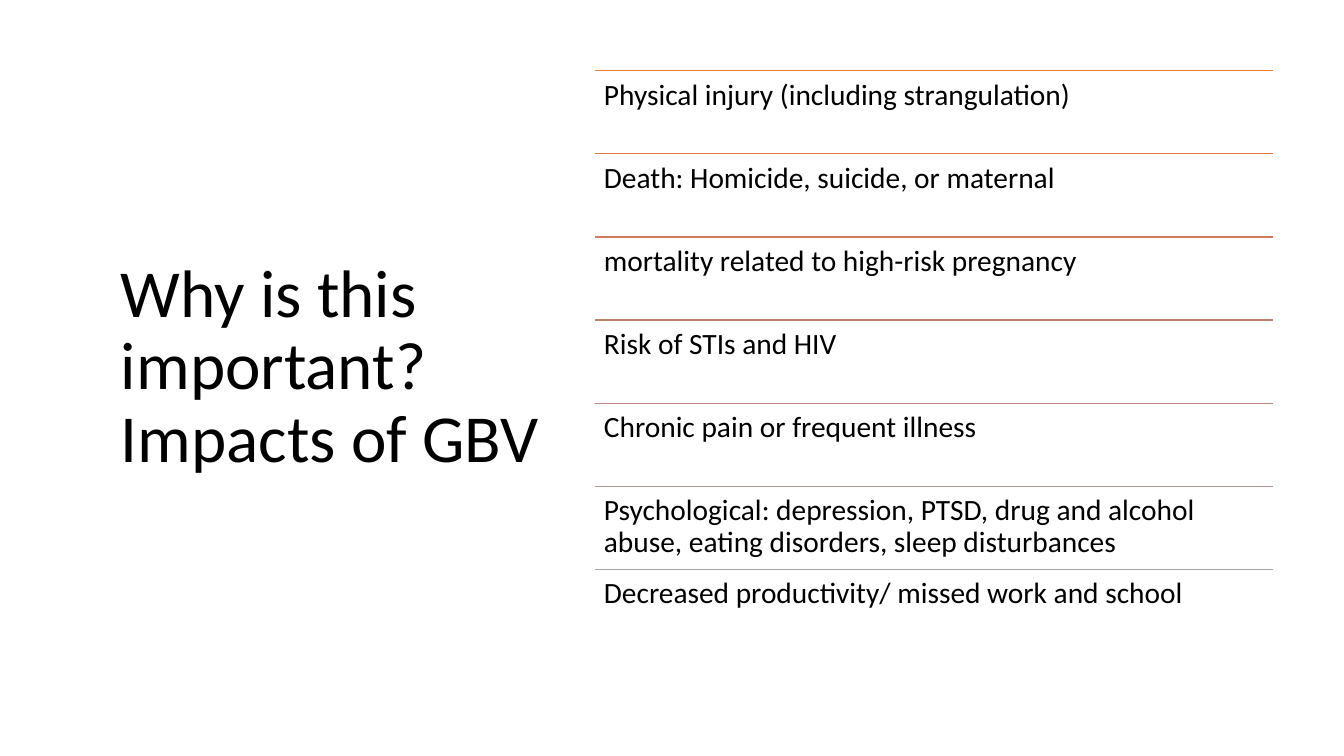
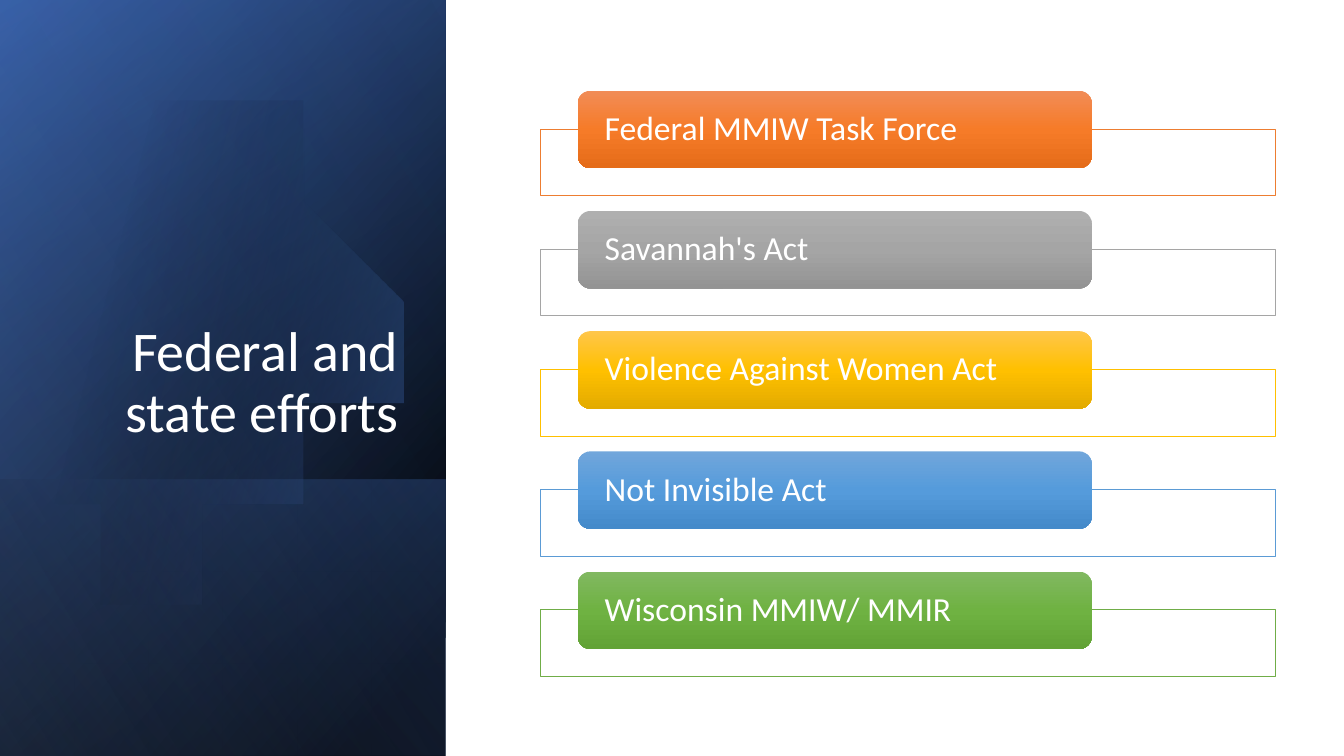
from dataclasses import dataclass
from typing import Optional

from lxml.etree import SubElement
from pptx import Presentation
from pptx.dml.color import RGBColor
from pptx.enum.shapes import MSO_CONNECTOR, MSO_SHAPE
from pptx.enum.text import MSO_ANCHOR, MSO_AUTO_SIZE, PP_ALIGN
from pptx.oxml.ns import qn
from pptx.util import Inches, Pt

FONT = "Calibri"
COLORS = {
    "black": "000000",
    "white": "FFFFFF",
    "blue": "4472C4",
    "deep_blue": "2F5597",
    "pale_blue": "8FAADC",
}
TITLE_ONLY_LAYOUT = 5


@dataclass(frozen=True)
class Box:
    left: float
    top: float
    width: float
    height: float

    def lengths(self) -> tuple:
        return tuple(Inches(v) for v in (self.left, self.top, self.width, self.height))


@dataclass(frozen=True)
class Stop:
    position: int
    color: str
    opacity: Optional[int] = None


@dataclass(frozen=True)
class Impact:
    text: str
    rule_color: str


@dataclass(frozen=True)
class Effort:
    text: str
    outline: str
    shades: tuple


@dataclass(frozen=True)
class Panel:
    box: Box
    stops: tuple
    angle: int


IMPACTS = (
    Impact("Physical injury (including strangulation)", "ED7D31"),
    Impact("Death: Homicide, suicide, or maternal", "DE7A47"),
    Impact("mortality related to high-risk pregnancy", "D17B5C"),
    Impact("Risk of STIs and HIV", "C48170"),
    Impact("Chronic pain or frequent illness", "B98A82"),
    Impact("Psychological: depression, PTSD, drug and alcohol abuse, "
           "eating disorders, sleep disturbances", "AE9694"),
    Impact("Decreased productivity/ missed work and school", "A5A5A5"),
)
EFFORTS = (
    Effort("Federal MMIW Task Force", "ED7D31", ("F18C57", "F67B28", "E56C19")),
    Effort("Savannah's Act", "A5A5A5", ("AFAFAF", "A5A5A5", "939393")),
    Effort("Violence Against Women Act", "FFC000", ("FFC64B", "FFC000", "E3AB00")),
    Effort("Not Invisible Act", "5B9BD5", ("71A6DB", "559BDB", "448ACA")),
    Effort("Wisconsin MMIW/ MMIR", "70AD47", ("81B861", "6FB242", "62A336")),
)

FULL_PANEL = Box(-1.54, 1.54, 7.5, 4.42)
LOWER_PANEL = Box(0.84, 3.92, 2.74, 4.42)
BACK_PANELS = (
    Panel(FULL_PANEL, (Stop(8, COLORS["black"]), Stop(100, COLORS["deep_blue"])), 50),
    Panel(FULL_PANEL, (Stop(0, COLORS["black"], 0), Stop(99, COLORS["blue"], 46)), 30),
    Panel(LOWER_PANEL, (Stop(2, COLORS["blue"], 29), Stop(100, COLORS["black"], 30)), 130),
)
FRONT_PANEL = Panel(
    FULL_PANEL, (Stop(0, COLORS["black"], 0), Stop(99, COLORS["pale_blue"], 11)), 120)

DISC_START = (1.49, 1.1)
DISC_RIGHT_CURVES = (
    ((2.46, 1.12), (3.35, 1.77), (3.63, 2.75)),
    ((3.98, 3.97), (3.28, 5.23), (2.07, 5.58)),
    ((1.31, 5.8), (0.53, 5.61), (-0.03, 5.14)),
)
DISC_LEFT_EDGE = ((-0.15, 5.03), (-0.15, 1.75), (0, 1.61))
DISC_TOP_CURVES = (
    ((0.23, 1.42), (0.5, 1.28), (0.8, 1.19)),
    ((1.03, 1.13), (1.26, 1.1), DISC_START),
)


def rgb(color: str) -> RGBColor:
    return RGBColor.from_string(color)


def write_text(shape, text: str, *, size: float, color: str,
               align=PP_ALIGN.LEFT, anchor=MSO_ANCHOR.TOP,
               margins: tuple = (0.1, 0.05)) -> None:
    frame = shape.text_frame
    frame.text = text
    frame.word_wrap = True
    frame.auto_size = MSO_AUTO_SIZE.NONE
    frame.vertical_anchor = anchor
    frame.margin_left = frame.margin_right = Inches(margins[0])
    frame.margin_top = frame.margin_bottom = Inches(margins[1])
    for paragraph in frame.paragraphs:
        paragraph.alignment = align
        paragraph.line_spacing = 0.9
        paragraph.space_before = Pt(0)
        for run in paragraph.runs:
            run.font.name = FONT
            run.font.size = Pt(size)
            run.font.color.rgb = rgb(color)


def place_title(slide, text: str, box: Box, *, size: float, color: str, align) -> None:
    title = slide.shapes.title
    title.left, title.top, title.width, title.height = box.lengths()
    write_text(title, text, size=size, color=color, align=align, anchor=MSO_ANCHOR.BOTTOM)
    slide.shapes.element.append(title.element)


def set_opacity(color_element, opacity: int) -> None:
    SubElement(color_element, qn("a:alpha")).set("val", str(opacity * 1000))


def fill_gradient(shape, stops: tuple, angle: float) -> None:
    shape.fill.gradient()
    shape.fill.gradient_angle = 360 - angle
    stop_list = next(shape.element.iter(qn("a:gsLst")))
    for old_stop in list(stop_list):
        stop_list.remove(old_stop)
    for stop in stops:
        stop_element = SubElement(stop_list, qn("a:gs"))
        stop_element.set("pos", str(stop.position * 1000))
        color_element = SubElement(stop_element, qn("a:srgbClr"))
        color_element.set("val", stop.color)
        if stop.opacity is not None:
            set_opacity(color_element, stop.opacity)


def add_plain_shape(slide, kind, box: Box):
    shape = slide.shapes.add_shape(kind, *box.lengths())
    shape.shadow.inherit = False
    shape.line.fill.background()
    return shape


def add_panel(slide, panel: Panel) -> None:
    shape = add_plain_shape(slide, MSO_SHAPE.RECTANGLE, panel.box)
    shape.rotation = 90
    next(shape.element.iter(qn("a:xfrm"))).set("flipH", "1")
    fill_gradient(shape, panel.stops, panel.angle)


def curve_points(start: tuple, curves: tuple, steps: int = 24) -> list:
    points = []
    for first, second, end in curves:
        for step in range(1, steps + 1):
            t = step / steps
            weights = ((1 - t) ** 3, 3 * t * (1 - t) ** 2, 3 * t ** 2 * (1 - t), t ** 3)
            corners = (start, first, second, end)
            points.append(tuple(
                sum(weight * corner[axis] for weight, corner in zip(weights, corners))
                for axis in (0, 1)))
        start = end
    return points


def add_disc(slide) -> None:
    points = (curve_points(DISC_START, DISC_RIGHT_CURVES) + list(DISC_LEFT_EDGE)
              + curve_points(DISC_LEFT_EDGE[-1], DISC_TOP_CURVES))
    builder = slide.shapes.build_freeform(*DISC_START, scale=Inches(1))
    builder.add_line_segments(points, close=True)
    disc = builder.convert_to_shape()
    disc.shadow.inherit = False
    disc.line.fill.background()
    fill_gradient(disc, (Stop(29, COLORS["black"], 0), Stop(100, COLORS["blue"], 43)), 14)


def add_rule(slide, left: float, top: float, width: float, color: str) -> None:
    rule = slide.shapes.add_connector(
        MSO_CONNECTOR.STRAIGHT, Inches(left), Inches(top), Inches(left + width), Inches(top))
    rule.line.color.rgb = rgb(color)
    rule.line.width = Pt(1)
    SubElement(rule.element.find(qn("p:spPr")), qn("a:effectLst"))


def add_impact(slide, impact: Impact, box: Box) -> None:
    add_rule(slide, box.left, box.top, box.width, impact.rule_color)
    text_box = slide.shapes.add_textbox(*box.lengths())
    write_text(text_box, impact.text, size=21, color=COLORS["black"], margins=(0.09, 0.09))


def add_effort(slide, effort: Effort, top: float) -> None:
    frame = add_plain_shape(slide, MSO_SHAPE.RECTANGLE, Box(5.36, top, 7.29, 0.66))
    frame.fill.solid()
    frame.fill.fore_color.rgb = rgb(COLORS["white"])
    set_opacity(next(frame.element.iter(qn("a:srgbClr"))), 90)
    frame.line.color.rgb = rgb(effort.outline)
    frame.line.width = Pt(0.5)

    bar = add_plain_shape(slide, MSO_SHAPE.ROUNDED_RECTANGLE, Box(5.73, top - 0.38, 5.1, 0.77))
    stops = tuple(Stop(50 * index, shade) for index, shade in enumerate(effort.shades))
    fill_gradient(bar, stops, 90)
    write_text(bar, effort.text, size=24, color=COLORS["white"],
               anchor=MSO_ANCHOR.MIDDLE, margins=(0.23, 0))


def build_impacts_slide(presentation) -> None:
    slide = presentation.slides.add_slide(presentation.slide_layouts[TITLE_ONLY_LAYOUT])
    place_title(slide, "Why is this important?\vImpacts of GBV", Box(1.1, 1.28, 4.4, 3.5),
                size=48, color=COLORS["black"], align=PP_ALIGN.LEFT)
    pitch = (5.65 - 0.7) / (len(IMPACTS) - 1)
    for index, impact in enumerate(IMPACTS):
        add_impact(slide, impact, Box(5.9, 0.7 + index * pitch, 6.73, pitch))


def build_efforts_slide(presentation) -> None:
    slide = presentation.slides.add_slide(presentation.slide_layouts[TITLE_ONLY_LAYOUT])
    for panel in BACK_PANELS:
        add_panel(slide, panel)
    add_disc(slide)
    add_panel(slide, FRONT_PANEL)
    place_title(slide, "Federal and state efforts", Box(0.64, 1.84, 3.41, 2.62),
                size=40, color=COLORS["white"], align=PP_ALIGN.RIGHT)
    pitch = (6.05 - 1.28) / (len(EFFORTS) - 1)
    for index, effort in enumerate(EFFORTS):
        add_effort(slide, effort, 1.28 + index * pitch)


def main() -> None:
    presentation = Presentation()
    presentation.slide_width = Inches(13.33)
    presentation.slide_height = Inches(7.5)
    build_impacts_slide(presentation)
    build_efforts_slide(presentation)
    presentation.save("out.pptx")


if __name__ == "__main__":
    main()
